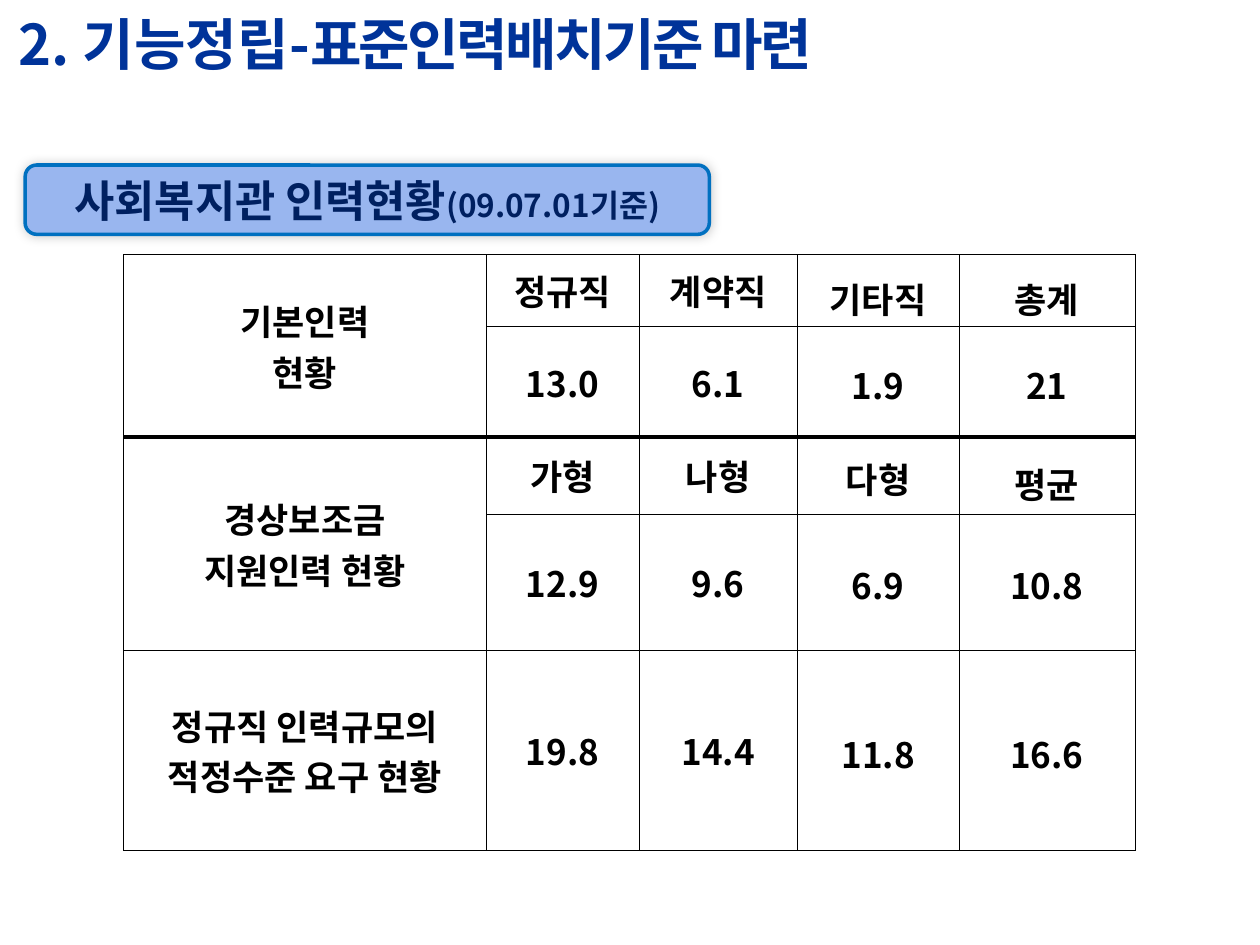
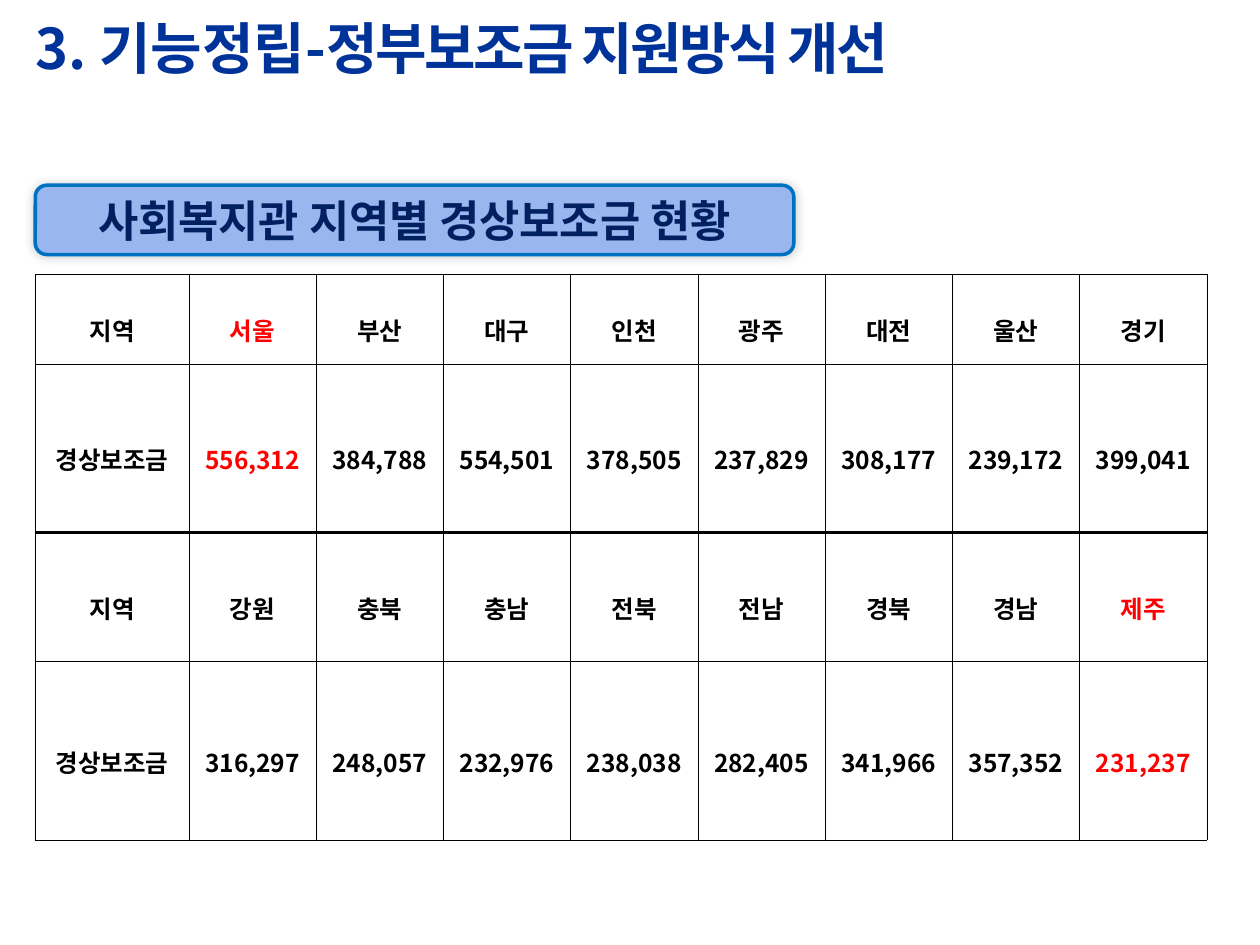
from lxml import etree
from pptx import Presentation
from pptx.dml.color import RGBColor
from pptx.enum.shapes import MSO_SHAPE as Shape
from pptx.enum.text import MSO_ANCHOR as Anchor, MSO_AUTO_SIZE as AutoSize, PP_ALIGN as Align
from pptx.oxml.ns import qn
from pptx.util import Inches, Pt

FONT = "Noto Sans CJK KR"
BLACK, RED, TITLE_BLUE = "000000", "FF0000", "003399"
LABEL_FILL, LABEL_LINE, LABEL_TEXT = "99B6EF", "0070C0", "002060"
TITLE_ONLY = 5
THIN = 0.28
DIVIDER_ROW = 2  # the thick rule runs above this row in both tables

# Content; None continues the cell above
STAFFING = {
    "title": ("2. 기능정립-", "표준인력배치기준 마련"),
    "title_at": (0.05, 0.02, 8.86, 0.64),
    "label": [("사회복지관 인력현황", 25), ("(09.07.01기준)", 18)],
    "label_at": (0.2, 1.31, 5.43, 0.55),
    "table_at": (0.98, 2.02),
    "columns": [2.88, 1.21, 1.26, 1.28, 1.4],
    "heights": [0.57, 0.88, 0.61, 1.08, 1.59],
    "size": 20,
    "divider": 2.55,
    "red": [],
    "rows": [
        ["기본인력\n현황", "정규직", "계약직", "기타직", "총계"],
        [None, "13.0", "6.1", "1.9", "21"],
        ["경상보조금\n지원인력 현황", "가형", "나형", "다형", "평균"],
        [None, "12.9", "9.6", "6.9", "10.8"],
        ["정규직 인력규모의\n적정수준 요구 현황", "19.8", "14.4", "11.8", "16.6"],
    ],
    "spacing": [
        [1, 1, 1, 1.3, 1.3],
        [1, 1, 1, 1.1, 1.1],
        [1, 1, 1, 1.1, 1.3],
        [1, 1, 1, 1.1, 1.1],
        [1, 1, 1, 1.1, 1.1],
    ],
}

SUBSIDIES = {
    "title": ("3. 기능정립-", "정부보조금 지원방식 개선"),
    "title_at": (0.18, 0.04, 9, 0.66),
    "label": [("사회복지관 지역별 경상보조금 현황", 25)],
    "label_at": (0.28, 1.47, 6.02, 0.55),
    "table_at": (0.28, 2.18),
    "columns": [1.22] + [1.01] * 8,
    "heights": [0.71, 1.34, 1.02, 1.42],
    "size": 14,
    "divider": 1.98,
    "red": ["서울", "556,312", "제주", "231,237"],
    "rows": [
        ["지역", "서울", "부산", "대구", "인천", "광주", "대전", "울산", "경기"],
        ["경상보조금", "556,312", "384,788", "554,501", "378,505",
         "237,829", "308,177", "239,172", "399,041"],
        ["지역", "강원", "충북", "충남", "전북", "전남", "경북", "경남", "제주"],
        ["경상보조금", "316,297", "248,057", "232,976", "238,038",
         "282,405", "341,966", "357,352", "231,237"],
    ],
    "spacing": [[1.6] * 9] * 4,
}


def color(value):
    return RGBColor.from_string(value)


def format_span(span, size, value):
    font = span.font
    font.size, font.bold, font.name = Pt(size), True, FONT
    font.color.rgb = color(value)
    etree.SubElement(font._element, qn("a:ea"), typeface=FONT)


def add_title(page, content):
    title = page.shapes.title
    title.left, title.top, title.width, title.height = map(Inches, content["title_at"])
    frame = title.text_frame
    frame.auto_size, frame.vertical_anchor, frame.word_wrap = AutoSize.NONE, Anchor.MIDDLE, True
    para = frame.paragraphs[0]
    para.alignment = Align.LEFT
    for text in content["title"]:
        span = para.add_run()
        span.text = text
        format_span(span, 32, TITLE_BLUE)
    para.runs[-1].font._element.set("spc", "-150")


def add_soft_shadow(box):
    effects = etree.SubElement(box._element.spPr, qn("a:effectLst"))
    shadow = etree.SubElement(effects, qn("a:outerShdw"), blurRad=str(Pt(6)), dist="0",
                              dir=str(315 * 60000), rotWithShape="0")
    shade = etree.SubElement(shadow, qn("a:srgbClr"), val=BLACK)
    etree.SubElement(shade, qn("a:alpha"), val="20000")


def add_label(page, content):
    box = page.shapes.add_shape(Shape.ROUNDED_RECTANGLE, *map(Inches, content["label_at"]))
    box.fill.solid()
    box.fill.fore_color.rgb = color(LABEL_FILL)
    box.line.color.rgb = color(LABEL_LINE)
    box.line.width = Pt(2)
    add_soft_shadow(box)
    box.text_frame.vertical_anchor = Anchor.MIDDLE
    para = box.text_frame.paragraphs[0]
    para.alignment = Align.CENTER
    for text, size in content["label"]:
        span = para.add_run()
        span.text = text
        format_span(span, size, LABEL_TEXT)


def set_borders(cell, top, bottom):
    properties = cell._tc.get_or_add_tcPr()
    for side, width in (("L", THIN), ("R", THIN), ("T", top), ("B", bottom)):
        line = etree.SubElement(properties, qn(f"a:ln{side}"), w=str(Pt(width)))
        fill = etree.SubElement(line, qn("a:solidFill"))
        etree.SubElement(fill, qn("a:srgbClr"), val=BLACK)


def fill_cell(cell, text, size, spacing, value):
    cell.vertical_anchor = Anchor.MIDDLE
    cell.margin_left = cell.margin_right = Inches(0.07)
    cell.margin_top = cell.margin_bottom = Inches(0.02)
    cell.text_frame.text = text
    for para in cell.text_frame.paragraphs:
        para.alignment = Align.CENTER
        para.line_spacing = float(spacing)
        format_span(para.runs[0], size, value)


def add_grid(page, content):
    rows, columns, heights = content["rows"], content["columns"], content["heights"]
    left, top = content["table_at"]
    place = map(Inches, (left, top, sum(columns), sum(heights)))
    table = page.shapes.add_table(len(rows), len(columns), *place).table
    table.first_row = table.horz_banding = False
    for column, width in zip(table.columns, columns):
        column.width = Inches(width)
    for row, height in zip(table.rows, heights):
        row.height = Inches(height)

    for r, texts in enumerate(rows):
        for c, text in enumerate(texts):
            cell = table.cell(r, c)
            spans_down = r + 1 < len(rows) and rows[r + 1][c] is None
            last = r + 1 if spans_down else r
            set_borders(cell,
                        content["divider"] if r == DIVIDER_ROW else THIN,
                        content["divider"] if last == DIVIDER_ROW - 1 else THIN)
            cell.fill.background()
            if text is None:
                continue
            value = RED if text in content["red"] else BLACK
            fill_cell(cell, text, content["size"], content["spacing"][r][c], value)
            if spans_down:
                cell.merge(table.cell(last, c))


def main():
    deck = Presentation()
    deck.slide_width, deck.slide_height = Inches(10), Inches(7.5)
    for content in (STAFFING, SUBSIDIES):
        page = deck.slides.add_slide(deck.slide_layouts[TITLE_ONLY])
        add_title(page, content)
        add_label(page, content)
        add_grid(page, content)
    deck.save("out.pptx")


if __name__ == "__main__":
    main()
